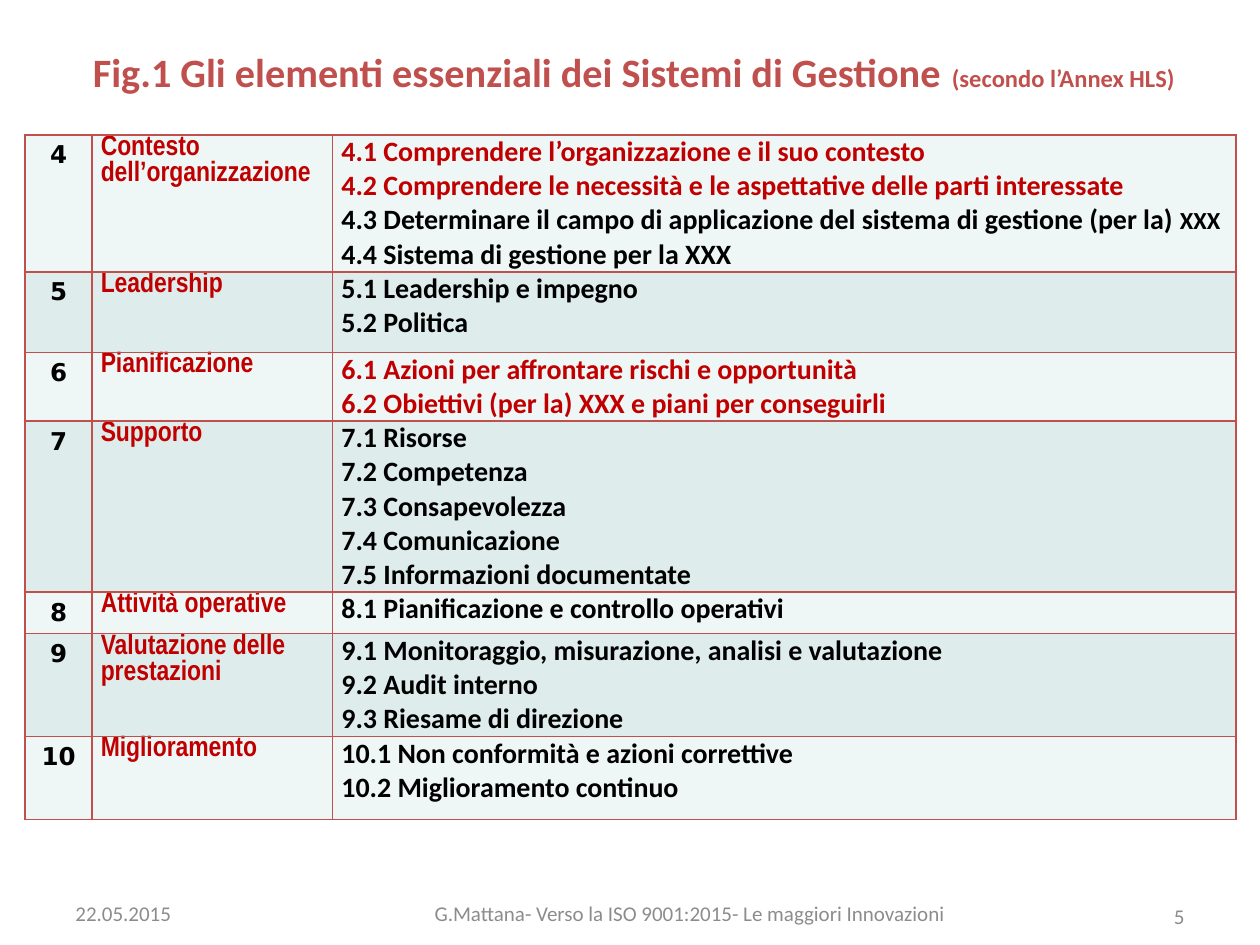
from lxml.etree import SubElement
from pptx import Presentation
from pptx.dml.color import RGBColor as Rgb
from pptx.enum.text import MSO_ANCHOR as Anchor, PP_ALIGN as Align
from pptx.oxml.ns import qn
from pptx.util import Inches, Pt

BRICK = Rgb(0xC0, 0x50, 0x4D)
RED = Rgb(0xC0, 0x00, 0x00)
BLACK = Rgb(0x00, 0x00, 0x00)
GRAY = Rgb(0x8C, 0x8C, 0x8C)
BANDS = Rgb(0xEF, 0xF6, 0xF6), Rgb(0xDE, 0xEC, 0xEC)

UNIT = Inches(0.1)
COLS = 5.3, 19.1, 71.7
ROWS = [
    ("4", "Contesto dell’organizzazione", 10.7, 2, [
        "4.1 Comprendere l’organizzazione e il suo contesto",
        "4.2 Comprendere le necessità e le aspettative delle parti interessate",
        [("4.3 Determinare il campo di applicazione del sistema di gestione (per la) ", 16),
         ("XXX", 14)],
        "4.4 Sistema di gestione per la XXX"]),
    ("5", "Leadership", 6.4, 0, [
        "5.1 Leadership e impegno",
        "5.2 Politica"]),
    ("6", "Pianificazione", 5.3, 2, [
        "6.1 Azioni per affrontare rischi e opportunità",
        "6.2 Obiettivi (per la) XXX e piani per conseguirli"]),
    ("7", "Supporto", 13.3, 0, [
        "7.1 Risorse",
        "7.2 Competenza",
        "7.3 Consapevolezza",
        "7.4 Comunicazione",
        "7.5 Informazioni documentate"]),
    ("8", "Attività operative", 3.3, 0, [
        "8.1 Pianificazione e controllo operativi"]),
    ("9", "Valutazione delle prestazioni", 8, 0, [
        "9.1 Monitoraggio, misurazione, analisi e valutazione",
        "9.2 Audit interno",
        "9.3 Riesame di direzione"]),
    ("10", "Miglioramento", 6.6, 0, [
        "10.1 Non conformità e azioni correttive",
        "10.2 Miglioramento continuo"]),
]


def grid(*spans):
    return [round(UNIT * span) for span in spans]


def write(para, text, size=16, font="Calibri", color=BLACK, bold=True,
          align=Align.LEFT):
    para.alignment = align
    parts = [(text, size)] if isinstance(text, str) else text
    for words, points in parts:
        run = para.add_run()
        run.text = words
        run.font.size = Pt(points)
        run.font.name = font
        run.font.bold = bold
        run.font.color.rgb = color


def border(cell):
    props = cell._tc.get_or_add_tcPr()
    for spot, side in enumerate(("lnL", "lnR", "lnT", "lnB")):
        line = SubElement(props, qn(f"a:{side}"), w=str(Pt(1)))
        fill = SubElement(line, qn("a:solidFill"))
        SubElement(fill, qn("a:srgbClr"), val=str(BRICK))
        props.insert(spot, line)


def dress(cell, fill, side, top):
    cell.margin_left = cell.margin_right = Inches(side)
    cell.margin_top = cell.margin_bottom = Inches(top)
    cell.fill.solid()
    cell.fill.fore_color.rgb = fill
    border(cell)


def add_title(slide):
    title = slide.shapes.title
    title.left, title.top, title.width, title.height = grid(3.1, 2.8, 93.7, 5.7)
    frame = title.text_frame
    frame.word_wrap = True
    frame.vertical_anchor = Anchor.MIDDLE
    write(frame.paragraphs[0],
          [(" Fig.1 Gli elementi essenziali dei Sistemi di Gestione ", 23),
           ("(secondo l’Annex HLS)", 14)],
          color=BRICK, align=Align.CENTER)


def add_grid(slide):
    total = sum(row[2] for row in ROWS)
    table = slide.shapes.add_table(len(ROWS), len(COLS),
                                   *grid(2, 10.7, sum(COLS), total)).table
    table.first_row = table.horz_banding = False
    for col, width in zip(table.columns, grid(*COLS)):
        col.width = width
    for index, (num, name, tall, reds, lines) in enumerate(ROWS):
        row = table.rows[index]
        row.height = grid(tall)[0]
        fill = BANDS[index % 2]
        key, head, body = row.cells
        dress(key, fill, 0.1, 0.05)
        dress(head, fill, 0.07, 0)
        dress(body, fill, 0.07, 0)
        write(key.text_frame.paragraphs[0], num, size=14, font="DejaVu Sans",
              align=Align.CENTER)
        write(head.text_frame.paragraphs[0], name, font="Arial Narrow", color=RED)
        frame = body.text_frame
        for place, line in enumerate(lines):
            para = frame.add_paragraph() if place else frame.paragraphs[0]
            write(para, line, color=RED if place < reds else BLACK)


def add_note(slide, text, spot, align):
    frame = slide.shapes.add_textbox(*grid(*spot)).text_frame
    frame.word_wrap = True
    frame.vertical_anchor = Anchor.MIDDLE
    write(frame.paragraphs[0], text, size=12, color=GRAY, bold=False, align=align)


def main():
    deck = Presentation()
    deck.slide_width, deck.slide_height = grid(100, 75)
    slide = deck.slides.add_slide(deck.slide_layouts[5])
    add_title(slide)
    add_grid(slide)
    add_note(slide, "5", (89.4, 71.6, 5.6, 2.2), Align.RIGHT)
    add_note(slide, "G.Mattana- Verso la ISO 9001:2015- Le maggiori Innovazioni",
             (26.4, 71.4, 56.7, 2.2), Align.CENTER)
    add_note(slide, "22.05.2015", (5, 71.4, 15.1, 2.2), Align.LEFT)
    deck.save("out.pptx")


if __name__ == "__main__":
    main()
